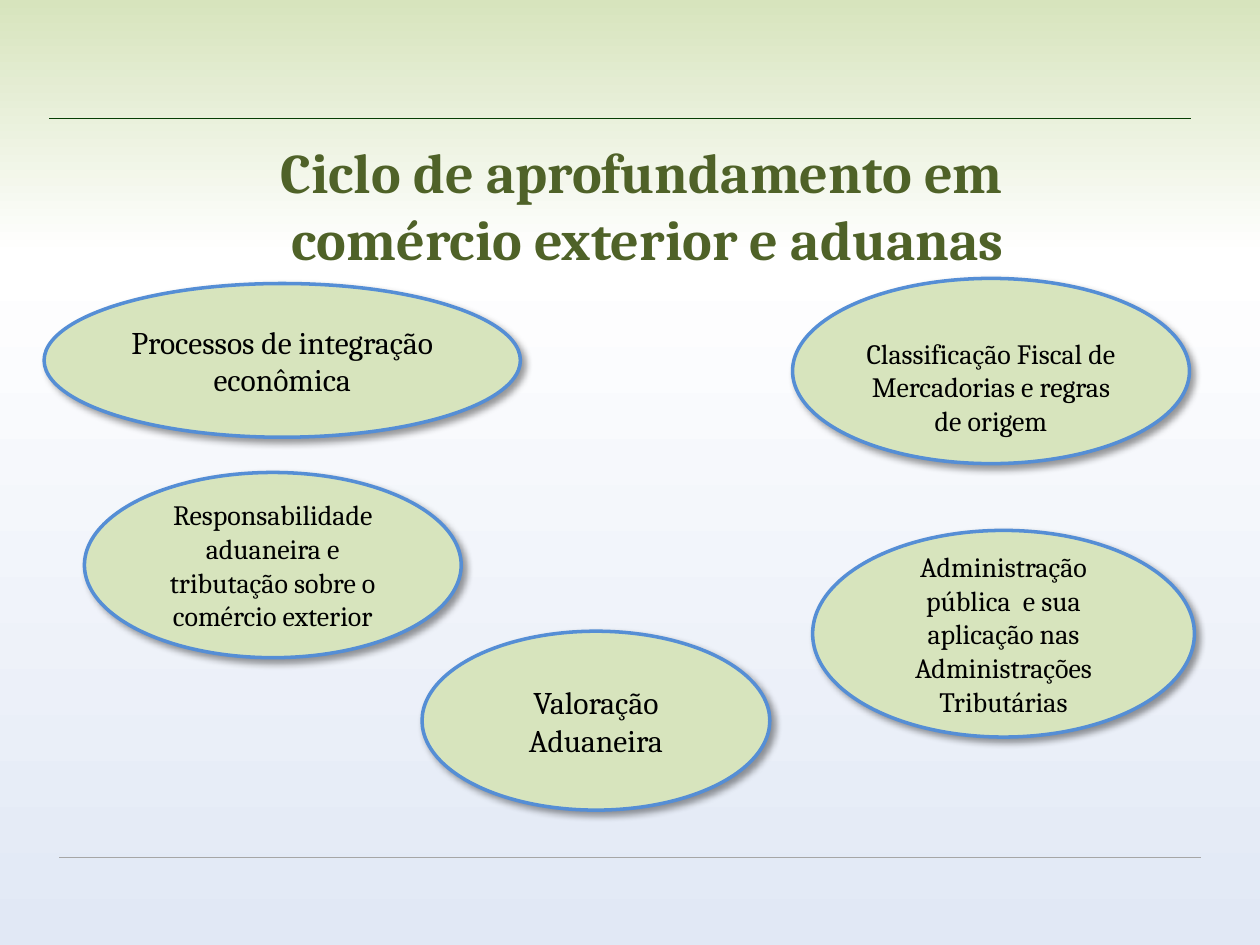
from lxml import etree
from pptx import Presentation
from pptx import util as u
from pptx.dml.color import RGBColor
from pptx.enum import shapes, text
from pptx.oxml import parse_xml
from pptx.oxml.ns import nsdecls, qn

COLS, ROWS = 100, 75


def color(value):
    return RGBColor.from_string(value)


def write(p, content, size=16, fill="000000", bold=False, font="Cambria"):
    p.alignment = text.PP_ALIGN.CENTER
    r = p.add_run()
    r.text = content
    r.font.name, r.font.size, r.font.bold = font, u.Pt(size), bold
    r.font.color.rgb = color(fill)


class Deck:
    fill, outline, heading = "D7E4BD", "558ED5", "4F6228"

    def __init__(self):
        self.prs = Presentation()
        self.prs.slide_width, self.prs.slide_height = u.Inches(10), u.Inches(7.5)
        self.s = self.prs.slides.add_slide(self.prs.slide_layouts[6])

    def box(self, col, row, cols, rows):
        w, h = self.prs.slide_width / COLS, self.prs.slide_height / ROWS
        return [round(v) for v in (col * w, row * h, cols * w, rows * h)]

    def background(self, stops):
        self.s.background.fill.solid()
        bg = self.s.background.fill._xPr
        gs = "".join(f'<a:gs pos="{pos * 1000}"><a:srgbClr val="{value}"/></a:gs>'
                     for pos, value in stops)
        grad = parse_xml(f'<a:gradFill {nsdecls("a")} rotWithShape="1"><a:gsLst>{gs}</a:gsLst>'
                         '<a:lin ang="5400000" scaled="0"/></a:gradFill>')
        bg.replace(bg.find(qn("a:solidFill")), grad)

    def rule(self, col, row, cols, value):
        x, y, w, _ = self.box(col, row, cols, 0)
        sp = self.s.shapes.add_connector(shapes.MSO_CONNECTOR.STRAIGHT, x, y, x + w, y)
        sp.line.color.rgb, sp.line.width = color(value), u.Pt(0.25)
        etree.SubElement(sp._element.spPr, qn("a:effectLst"))

    def title(self, place, lines):
        tf = self.s.shapes.add_textbox(*self.box(*place)).text_frame
        tf.word_wrap, tf.vertical_anchor = True, text.MSO_ANCHOR.MIDDLE
        for i, line in enumerate(lines):
            p = tf.add_paragraph() if i else tf.paragraphs[0]
            write(p, line, size=32, fill=self.heading, bold=True)

    def topic(self, place, content, size=16, top=0.05, bottom=0.05):
        sp = self.s.shapes.add_shape(shapes.MSO_SHAPE.OVAL, *self.box(*place))
        sp.fill.solid()
        sp.fill.fore_color.rgb = color(self.fill)
        sp.line.color.rgb, sp.line.width = color(self.outline), u.Pt(2)
        sp.shadow.inherit = False
        sp._element.spPr.find(qn("a:effectLst")).append(parse_xml(
            f'<a:outerShdw {nsdecls("a")} blurRad="{u.Pt(4)}" dist="{u.Pt(3)}" dir="2700000" '
            'algn="tl" rotWithShape="0"><a:srgbClr val="000000"><a:alpha val="40000"/>'
            '</a:srgbClr></a:outerShdw>'))
        tf = sp.text_frame
        tf.word_wrap, tf.vertical_anchor = True, text.MSO_ANCHOR.MIDDLE
        tf.margin_top, tf.margin_bottom = u.Inches(top), u.Inches(bottom)
        write(tf.paragraphs[0], content, size=size)


def main():
    deck = Deck()
    deck.background([(0, "D7E4BD"), (27, "FFFFFF"), (100, "E1E8F5")])
    deck.rule(4.7, 68, 90.6, "A6A6A6")
    deck.rule(3.9, 9.4, 90.6, "073E04")
    deck.topic((3.5, 22.5, 37.8, 12.2), "Processos de integração econômica", size=18)
    deck.topic((6.7, 37.5, 29.9, 14.7),
               "Responsabilidade aduaneira e tributação sobre o comércio exterior")
    deck.topic((62.9, 22.1, 31.5, 14.7),
               "Classificação Fiscal de Mercadorias e regras de origem", top=0.25, bottom=0)
    deck.topic((33.5, 50.1, 27.6, 14.2), "Valoração Aduaneira", size=18)
    deck.title((6.8, 9.6, 89.3, 13.3),
               ["Ciclo de aprofundamento em ", "comércio exterior e aduanas"])
    deck.topic((64.5, 42.1, 30.3, 16.4),
               "Administração pública  e sua aplicação nas Administrações Tributárias")
    deck.prs.save("out.pptx")


if __name__ == "__main__":
    main()
